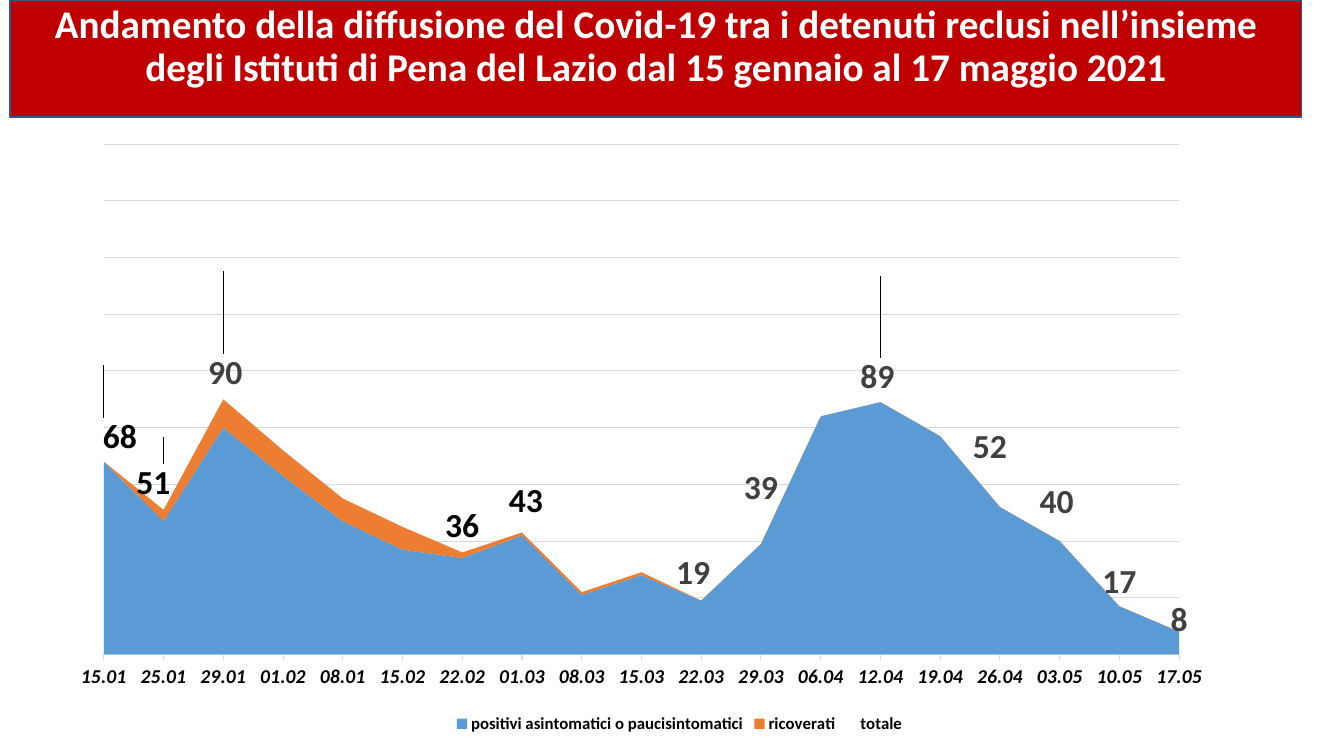
import pptx
import pptx.chart.data
import pptx.dml.color
import pptx.enum.chart
import pptx.enum.text
import pptx.oxml
import pptx.oxml.ns
import pptx.util
from pptx.util import Inches

# Content
TITLE = ("Andamento della diffusione del Covid-19 tra i detenuti reclusi nell’insieme "
         "degli Istituti di Pena del Lazio dal 15 gennaio al 17 maggio 2021")
DATES = ["15.01", "25.01", "29.01", "01.02", "08.01", "15.02", "22.02", "01.03", "08.03", "15.03",
         "22.03", "29.03", "06.04", "12.04", "19.04", "26.04", "03.05", "10.05", "17.05"]
POSITIVE = [68, 47, 80, 63, 47, 37, 34, 42, 21, 28, 19, 39, 84, 89, 77, 52, 40, 17, 8]
HOSPITAL = [0, 4, 10, 9, 8, 8, 2, 1, 1, 1, 0, 0] + [None] * 7
TOTAL = [p + (h or 0) for p, h in zip(POSITIVE, HOSPITAL)]
HIDDEN_LABELS = {3, 4, 5, 8, 9, 12, 14}
BLACK_LABELS = {0, 1, 6, 7}
# Shift of a label from the middle of its area, in inches
LABEL_SHIFTS = {0: (0.16, 0.72), 1: (-0.1, 0.46), 2: (0.02, 1.01), 6: (0, 0.25), 7: (0.04, 0.3),
                10: (-0.08, 0), 13: (-0.03, 1.01), 15: (-0.1, 0.14), 16: (-0.03, 0.18)}

THEME = {
    "font": "Calibri", "banner": "C00000", "banner_line": "325491", "white": "FFFFFF",
    "positive": "5B9BD5", "hospital": "ED7D31", "grid": "D9D9D9", "text": "000000",
    "label": "404040", "title_size": 28, "label_size": 24, "axis_size": 14, "legend_size": 12,
}
CHART_BOX = (0.56, 1.16, 12.36, 6.16)
PLOT_BOX = {"x": 0.038, "y": 0.044, "w": 0.863, "h": 0.822}
NS = pptx.oxml.ns.nsdecls("c", "a")


def rgb(name):
    return pptx.dml.color.RGBColor.from_string(THEME[name])


def style_font(font, size, color, italic=False):
    font.name = THEME["font"]
    font.size = pptx.util.Pt(THEME[size])
    font.bold = True
    font.italic = italic
    font.color.rgb = rgb(color)


def style_line(line, color, width):
    line.color.rgb = rgb(color)
    line.width = pptx.util.Pt(width)


def point_label(i):
    """Return the label of one total: hidden, or shifted with its own colour."""
    if i in HIDDEN_LABELS:
        body = '<c:delete val="1"/>'
    else:
        dx, dy = LABEL_SHIFTS[i]
        color = THEME["text" if i in BLACK_LABELS else "label"]
        flags = "".join(f'<c:show{n} val="{int(n == "Val")}"/>' for n in
                        ("LegendKey", "Val", "CatName", "SerName", "Percent", "BubbleSize"))
        body = (f'<c:layout><c:manualLayout><c:x val="{dx / CHART_BOX[2]:.4f}"/>'
                f'<c:y val="{dy / CHART_BOX[3]:.4f}"/></c:manualLayout></c:layout>'
                '<c:spPr><a:noFill/><a:ln><a:noFill/></a:ln></c:spPr>'
                '<c:txPr><a:bodyPr/><a:p><a:pPr>'
                f'<a:defRPr sz="{THEME["label_size"] * 100}" b="1"><a:solidFill>'
                f'<a:srgbClr val="{color}"/></a:solidFill><a:latin typeface="{THEME["font"]}"/>'
                f'</a:defRPr></a:pPr><a:endParaRPr lang="it-IT"/></a:p></c:txPr>{flags}')
    return pptx.oxml.parse_xml(f'<c:dLbl {NS}><c:idx val="{i}"/>{body}</c:dLbl>')


def add_banner(slide):
    sp = slide.shapes.title
    sp.left, sp.top, sp.width, sp.height = map(Inches, (0.1, 0, 12.81, 1.16))
    sp.fill.solid()
    sp.fill.fore_color.rgb = rgb("banner")
    style_line(sp.line, "banner_line", 1)
    tf = sp.text_frame
    tf.text = TITLE
    tf.word_wrap = True
    tf.auto_size = pptx.enum.text.MSO_AUTO_SIZE.NONE
    tf.vertical_anchor = pptx.enum.text.MSO_ANCHOR.TOP
    tf.margin_top = Inches(0.05)
    p = tf.paragraphs[0]
    p.alignment = pptx.enum.text.PP_ALIGN.CENTER
    p.line_spacing = 0.9
    style_font(p.runs[0].font, "title_size", "white")


def add_area_chart(slide):
    data = pptx.chart.data.CategoryChartData()
    data.categories = DATES
    data.add_series("positivi asintomatici o paucisintomatici", POSITIVE)
    data.add_series("ricoverati", HOSPITAL)
    data.add_series("totale", TOTAL)
    chart = slide.shapes.add_chart(pptx.enum.chart.XL_CHART_TYPE.AREA_STACKED,
                                   *map(Inches, CHART_BOX), data).chart
    chart.has_title = False
    chart.font.name = THEME["font"]
    chart.font.size = pptx.util.Pt(10)

    # Series: the total is invisible and only carries labels
    positive, hospital, total = chart.plots[0].series
    for series, color in ((positive, "positive"), (hospital, "hospital")):
        series.format.fill.solid()
        series.format.fill.fore_color.rgb = rgb(color)
    total.format.fill.background()
    total.format.line.fill.background()
    labels = total.data_labels
    labels.show_value = True
    style_font(labels.font, "label_size", "label")
    dlbls = total._element.find(pptx.oxml.ns.qn("c:dLbls"))
    for n, i in enumerate(sorted(HIDDEN_LABELS | set(LABEL_SHIFTS))):
        dlbls.insert(n, point_label(i))

    # Axes
    dates, values = chart.category_axis, chart.value_axis
    dates.has_major_gridlines = False
    dates.major_tick_mark = pptx.enum.chart.XL_TICK_MARK.OUTSIDE
    style_line(dates.format.line, "grid", 0.75)
    style_font(dates.tick_labels.font, "axis_size", "text", italic=True)
    values.visible = False
    values.minimum_scale, values.maximum_scale, values.major_unit = 0, 180, 20
    values.has_major_gridlines = True
    style_line(values.major_gridlines.format.line, "grid", 0.75)
    for cross in values._element.findall(pptx.oxml.ns.qn("c:crossBetween")):
        cross.set("val", "midCat")

    # Legend
    chart.has_legend = True
    chart.legend.position = pptx.enum.chart.XL_LEGEND_POSITION.BOTTOM
    chart.legend.include_in_layout = False
    style_font(chart.legend.font, "legend_size", "text")

    # Plot position inside the chart
    plot_area = chart._chartSpace.chart.plotArea
    for layout in plot_area.findall(pptx.oxml.ns.qn("c:layout")):
        plot_area.remove(layout)
    sizes = "".join(f'<c:{k} val="{v}"/>' for k, v in PLOT_BOX.items())
    plot_area.insert(0, pptx.oxml.parse_xml(
        f'<c:layout {NS}><c:manualLayout><c:layoutTarget val="inner"/><c:xMode val="edge"/>'
        f'<c:yMode val="edge"/>{sizes}</c:manualLayout></c:layout>'))


def main():
    prs = pptx.Presentation()
    prs.slide_width, prs.slide_height = Inches(13.33), Inches(7.5)
    slide = prs.slides.add_slide(prs.slide_layouts[5])
    add_banner(slide)
    add_area_chart(slide)
    prs.save("out.pptx")


if __name__ == "__main__":
    main()
